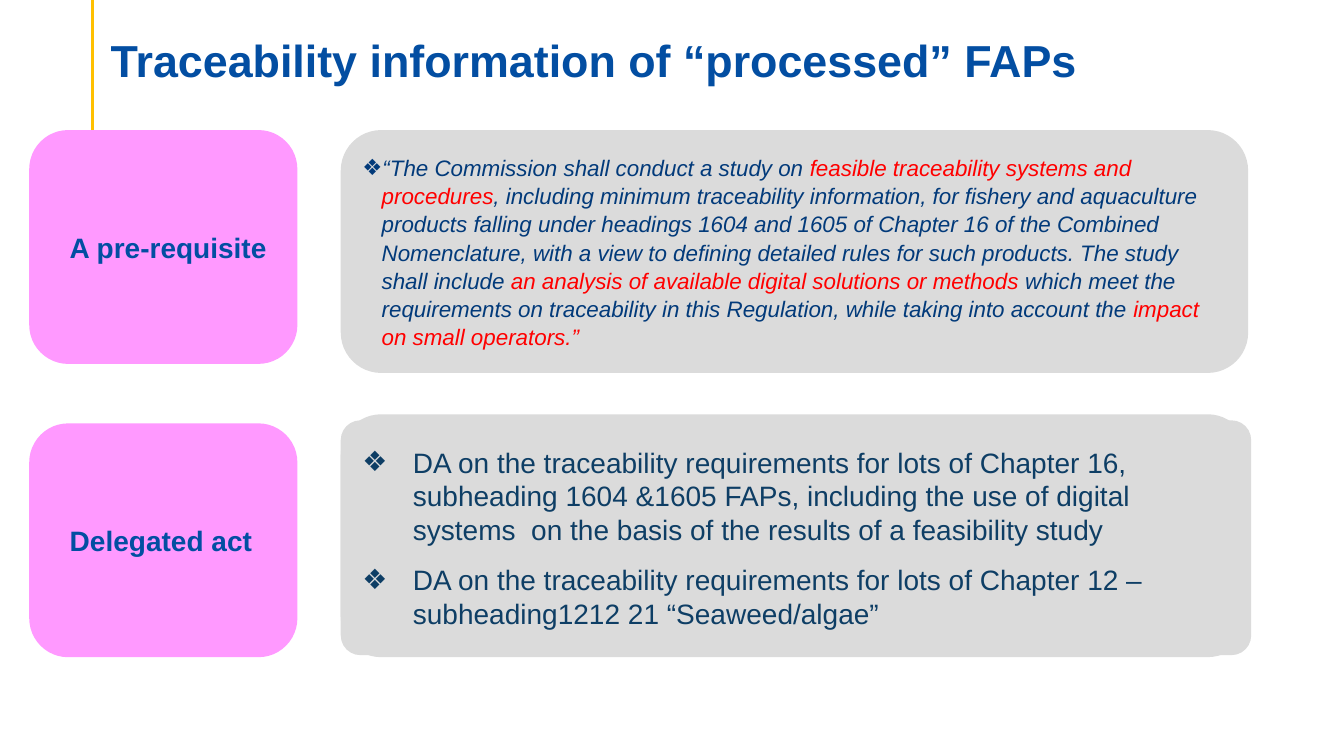
"""Builds the slide on traceability information of processed FAPs."""
from lxml import etree
from pptx import Presentation
from pptx.dml.color import RGBColor
from pptx.enum.shapes import MSO_CONNECTOR, MSO_SHAPE
from pptx.enum.text import MSO_ANCHOR, PP_ALIGN
from pptx.oxml.ns import qn
from pptx.util import Inches, Pt

ROUNDED = MSO_SHAPE.ROUNDED_RECTANGLE
STRAIGHT = MSO_CONNECTOR.STRAIGHT
MIDDLE, BOTTOM = MSO_ANCHOR.MIDDLE, MSO_ANCHOR.BOTTOM
LEFT = PP_ALIGN.LEFT

COLORS = {
    "title": "034EA2", "label": "024EA2", "quote": "023A7A", "stress": "FF0000",
    "act": "0E3E65", "pink": "FF99FF", "grey": "DBDBDB", "rule": "FFC000",
}
LABEL_LEFT, LABEL_WIDTH, LABEL_HEIGHT = 0.29, 2.66, 2.32
PANEL_LEFT, PANEL_WIDTH, PANEL_HEIGHT = 3.38, 9, 2.41
FIRST_ROW, ROW_STEP = 1.29, 2.91

prs = Presentation()
prs.slide_width, prs.slide_height = Inches(13.33), Inches(7.5)
slide = prs.slides.add_slide(prs.slide_layouts[6])


def add_box(left, top, width, height, color):
    box = slide.shapes.add_shape(
        ROUNDED, Inches(left), Inches(top), Inches(width), Inches(height))
    box.shadow.inherit = False
    box.fill.solid()
    box.fill.fore_color.rgb = RGBColor.from_string(COLORS[color])
    box.line.fill.background()
    box.text_frame.word_wrap = True
    box.text_frame.vertical_anchor = MIDDLE
    return box


def write(paragraph, runs, size, margin=0, indent=0, bullet=None, bold=False, italic=False):
    paragraph.alignment = LEFT
    properties = paragraph._p.get_or_add_pPr()
    properties.set("marL", str(Inches(margin)))
    properties.set("indent", str(Inches(indent)))
    if bullet:
        etree.SubElement(properties, qn("a:buFont")).set("typeface", "Arial")
        etree.SubElement(properties, qn("a:buChar")).set("char", bullet)
    for text, color in runs:
        run = paragraph.add_run()
        run.text = text
        run.font.name, run.font.size = "Arial", Pt(size)
        run.font.bold, run.font.italic = bold, italic
        run.font.color.rgb = RGBColor.from_string(COLORS[color])


rule = slide.shapes.add_connector(STRAIGHT, Inches(0.92), 0, Inches(0.92), Inches(1.4))
rule.line.color.rgb = RGBColor.from_string(COLORS["rule"])
rule.line.width = Pt(2.25)
etree.SubElement(rule._element.spPr, qn("a:effectLst"))

title = slide.shapes.add_textbox(
    Inches(1), Inches(0.31), Inches(11.93), Inches(0.56)).text_frame
title.word_wrap = True
title.vertical_anchor = BOTTOM
title.margin_bottom = 0
title.paragraphs[0].line_spacing = 0.9
write(title.paragraphs[0], [("Traceability information of “processed” FAPs", "title")],
      32, bold=True)

quote_panel = add_box(PANEL_LEFT, FIRST_ROW, PANEL_WIDTH, PANEL_HEIGHT, "grey")
quote = quote_panel.text_frame.paragraphs[0]
quote.level = 1
write(quote, [
    ("“The Commission shall conduct a study on ", "quote"),
    ("feasible traceability systems and procedures", "stress"),
    (", including minimum traceability information, for fishery and aquaculture products "
     "falling under headings 1604 and 1605 of Chapter 16 of the Combined Nomenclature, "
     "with a view to defining detailed rules for such products. The study shall include ",
     "quote"),
    ("an analysis of available digital solutions or methods ", "stress"),
    ("which meet the requirements on traceability in this Regulation, "
     "while taking into account the ", "quote"),
    ("impact on small operators.”", "stress"),
], 16, margin=0.19, indent=-0.5, bullet="❖", italic=True)
quote.line_spacing = 1.05
quote.space_after = Pt(6)

for row, label in enumerate(["A pre-requisite", "Delegated act"]):
    label_box = add_box(
        LABEL_LEFT, FIRST_ROW + row * ROW_STEP, LABEL_WIDTH, LABEL_HEIGHT, "pink")
    write(label_box.text_frame.paragraphs[0], [(label, "label")], 20, margin=0.19, bold=True)

add_box(PANEL_LEFT, 4.11, PANEL_WIDTH, PANEL_HEIGHT, "grey")
acts_panel = add_box(PANEL_LEFT, 4.17, 9.03, 2.33, "grey")
acts_panel.adjustments[0] = 0.084
acts = [
    "DA on the traceability requirements for lots of Chapter 16, subheading 1604 &1605 FAPs, "
    "including the use of digital systems  on the basis of the results of a feasibility study",
    "DA on the traceability requirements for lots of Chapter 12 – "
    "subheading1212 21 “Seaweed/algae”",
]
for number, act in enumerate(acts):
    frame = acts_panel.text_frame
    paragraph = frame.add_paragraph() if number else frame.paragraphs[0]
    write(paragraph, [(act, "act")], 20, margin=0.56, indent=-0.5, bullet="❖")
    paragraph.space_before = Pt(6 if number else 0)
    paragraph.space_after = Pt(6)

prs.save("out.pptx")
